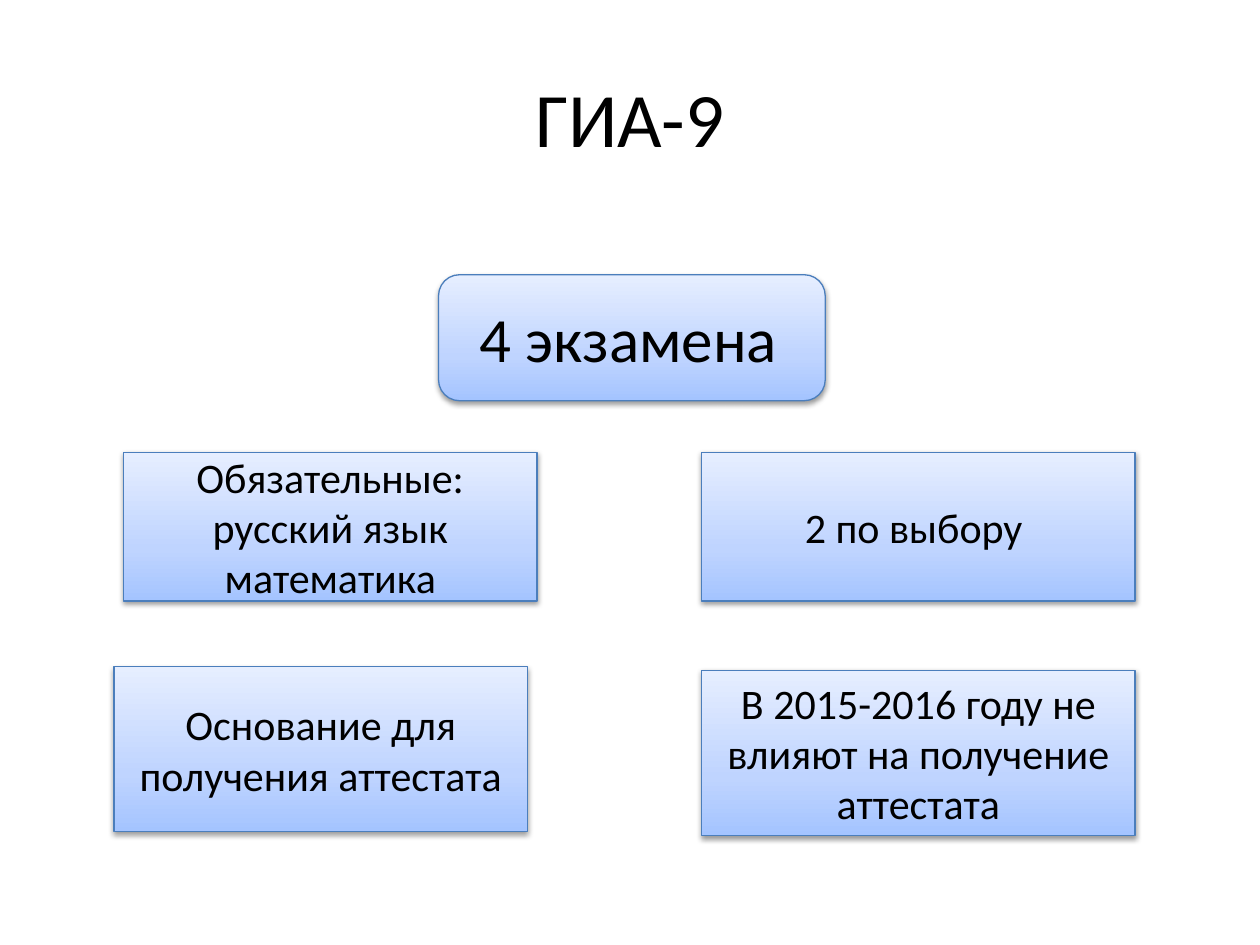
from dataclasses import dataclass

from lxml.etree import SubElement
from pptx import Presentation
from pptx.dml.color import RGBColor
from pptx.enum.shapes import MSO_SHAPE as SHAPE
from pptx.enum.text import MSO_ANCHOR as ANCHOR, PP_ALIGN as ALIGN
from pptx.oxml.ns import qn
from pptx.util import Pt


@dataclass(frozen=True)
class Theme:
    """Colours, font and type sizes of the slide."""
    font: str = "Calibri"
    text: str = "000000"
    line: str = "4B7EBC"
    stops: tuple = ((0, "A4C4FF"), (35, "BFD4FF"), (100, "E6EEFF"))
    title: int = 44
    head: int = 36
    body: int = 24
    small: int = 18


THEME = Theme()


def format_run(r, size):
    """Apply the theme font and colour to a run."""
    r.font.name = THEME.font
    r.font.size = Pt(size)
    r.font.color.rgb = RGBColor.from_string(THEME.text)


def add_title(s, text):
    """Fill and place the title placeholder."""
    sp = s.shapes.title
    sp.left, sp.top, sp.width, sp.height = Pt(36), Pt(21.6), Pt(648), Pt(90)
    tf = sp.text_frame
    tf.text = text
    tf.vertical_anchor = ANCHOR.MIDDLE
    p = tf.paragraphs[0]
    p.alignment = ALIGN.CENTER
    format_run(p.runs[0], THEME.title)


def add_gradient(sp):
    """Give a shape the vertical theme gradient."""
    grad = SubElement(sp.element.spPr, qn("a:gradFill"), rotWithShape="1")
    stops = SubElement(grad, qn("a:gsLst"))
    for pos, color in THEME.stops:
        gs = SubElement(stops, qn("a:gs"), pos=str(pos * 1000))
        SubElement(gs, qn("a:srgbClr"), val=color)
    SubElement(grad, qn("a:lin"), ang="16200000", scaled="0")


def add_shadow(sp):
    """Give a shape a soft shadow below it."""
    effects = SubElement(sp.element.spPr, qn("a:effectLst"))
    shadow = SubElement(effects, qn("a:outerShdw"), blurRad="40000", dist="20000",
                        dir="5400000", rotWithShape="0")
    color = SubElement(shadow, qn("a:srgbClr"), val="000000")
    SubElement(color, qn("a:alpha"), val="38000")


def add_box(s, kind, left, top, width, height, runs):
    """Add a gradient box with centred text runs."""
    sp = s.shapes.add_shape(kind, Pt(left), Pt(top), Pt(width), Pt(height))
    add_gradient(sp)
    sp.line.color.rgb = RGBColor.from_string(THEME.line)
    sp.line.width = Pt(0.75)
    add_shadow(sp)
    tf = sp.text_frame
    tf.word_wrap = True
    tf.vertical_anchor = ANCHOR.MIDDLE
    p = tf.paragraphs[0]
    p.alignment = ALIGN.CENTER
    for text, size in runs:
        r = p.add_run()
        r.text = text
        format_run(r, size)


def main():
    """Build the slide and save it."""
    prs = Presentation()
    prs.slide_width, prs.slide_height = Pt(720), Pt(540)
    s = prs.slides.add_slide(prs.slide_layouts[5])
    add_title(s, "ГИА-9")
    add_box(s, SHAPE.ROUNDED_RECTANGLE, 250.6, 157, 221, 72,
            [(" ", THEME.small), ("4 экзамена ", THEME.head)])
    boxes = (
        (70.6, 258.5, 236.2, 85, "Обязательные: русский язык математика"),
        (401, 258.5, 247.7, 85, "2 по выбору "),
        (65.2, 380.9, 236.2, 94.3, "Основание для получения аттестата"),
        (401, 383, 247.7, 94.3, "В 2015-2016 году не влияют на получение аттестата"),
    )
    for *place, text in boxes:
        add_box(s, SHAPE.RECTANGLE, *place, [(text, THEME.body)])
    prs.save("out.pptx")


if __name__ == "__main__":
    main()
